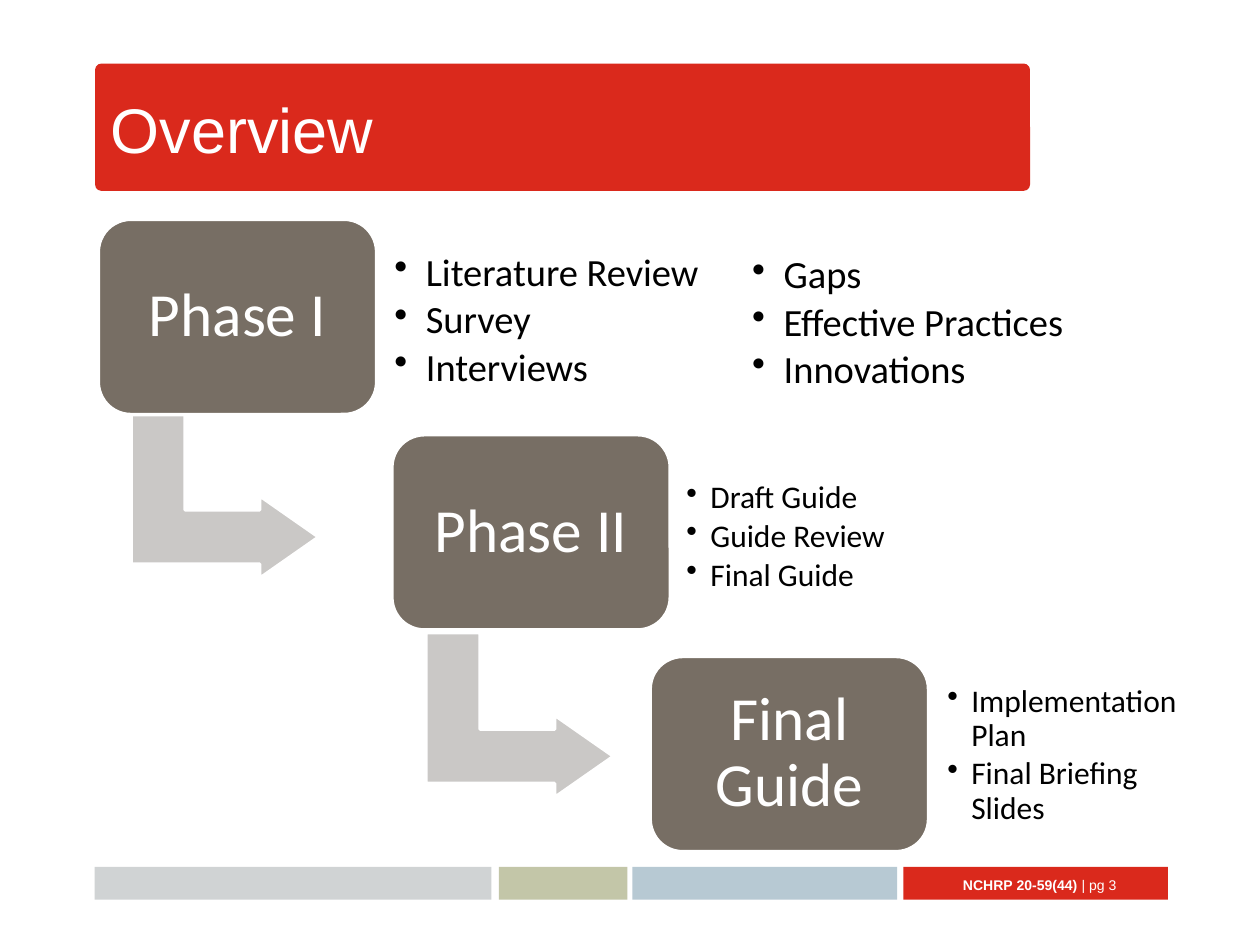
import pptx
import pptx.util
import pptx.dml.color
import pptx.enum.shapes
import pptx.enum.text
import pptx.oxml
import pptx.oxml.ns

Inches = pptx.util.Inches
Pt = pptx.util.Pt
Preset = pptx.enum.shapes.MSO_SHAPE
Align = pptx.enum.text.PP_ALIGN
Anchor = pptx.enum.text.MSO_ANCHOR
RED, BROWN, GRAY, WHITE, BLACK = "DA291C", "776E64", "CAC8C6", "FFFFFF", "000000"


def color(hex_string):
    return pptx.dml.color.RGBColor.from_string(hex_string)


def add_filled(preset, box, fill, adjustments, line=None, line_width=0):
    shape = slide.shapes.add_shape(preset, *map(Inches, box))
    shape.shadow.inherit = False
    shape.fill.solid()
    shape.fill.fore_color.rgb = color(fill)
    for index, value in enumerate(adjustments):
        shape.adjustments[index] = value
    if line:
        shape.line.color.rgb = color(line)
        shape.line.width = Pt(line_width)
    else:
        shape.line.fill.background()
    return shape


presentation = pptx.Presentation()
presentation.slide_width = Inches(10)
presentation.slide_height = Inches(7.5)
slide = presentation.slides.add_slide(presentation.slide_layouts[5])

add_filled(Preset.ROUNDED_RECTANGLE, (0.76, 0.51, 7.41, 1), RED, [0.045], RED, 0.75)

title = slide.shapes.title
title.element.getparent().append(title.element)
title.left, title.top, title.width, title.height = map(Inches, (0.78, 0.51, 7.38, 1.01))
title.text_frame.vertical_anchor = Anchor.MIDDLE
paragraph = title.text_frame.paragraphs[0]
paragraph.alignment = Align.LEFT
run = paragraph.add_run()
run.text = "Overview"
run.font.name = "Arial"
run.font.size = Pt(36)
run.font.color.rgb = color(WHITE)

footer_bars = [
    (0.75, 3.15, "D0D3D4"),
    (3.96, 1.02, "C3C6A8"),
    (5.02, 2.1, "B7C9D3"),
    (7.17, 2.1, RED),
]
for left, width, fill in footer_bars:
    add_filled(Preset.ROUNDED_RECTANGLE, (left, 6.88, width, 0.26), fill, [0])

footer = slide.shapes.add_textbox(*map(Inches, (6.63, 6.82, 2.33, 0.4)))
footer.text_frame.word_wrap = True
footer.text_frame.vertical_anchor = Anchor.MIDDLE
paragraph = footer.text_frame.paragraphs[0]
paragraph.alignment = Align.RIGHT
for text, bold in [("NCHRP 20-59(44) ", True), ("| pg 3", False)]:
    run = paragraph.add_run()
    run.text = text
    run.font.name = "Arial"
    run.font.size = Pt(8)
    run.font.bold = bold
    run.font.color.rgb = color(WHITE)

for left, top in [(1.13, 3.19), (3.47, 4.93)]:
    arrow = add_filled(Preset.BENT_UP_ARROW, (left, top, 1.31, 1.49), GRAY,
                       [0.328, 0.25, 0.358], WHITE, 2)
    arrow.rotation = 90

phases = [("Phase I", 0.78, 1.74), ("Phase II", 3.11, 3.45), ("Final Guide", 5.16, 5.21)]
for text, left, top in phases:
    phase = add_filled(Preset.ROUNDED_RECTANGLE, (left, top, 2.21, 1.55), BROWN,
                       [0.167], WHITE, 2)
    frame = phase.text_frame
    frame.word_wrap = True
    frame.vertical_anchor = Anchor.MIDDLE
    frame.margin_left = frame.margin_right = Inches(0.15)
    frame.margin_top = frame.margin_bottom = Inches(0.15)
    paragraph = frame.paragraphs[0]
    paragraph.alignment = Align.CENTER
    paragraph.line_spacing = 0.9
    run = paragraph.add_run()
    run.text = text
    run.font.name = "Calibri"
    run.font.size = Pt(35)
    run.font.color.rgb = color(WHITE)

bullet_lists = [
    ((3.01, 1.85, 3.72, 1.4), 0.12, 22, 0.25, ["Literature Review", "Survey", "Interviews"]),
    ((5.86, 1.89, 2.81, 1.36), 0.11, 22, 0.25, ["Gaps", "Effective Practices", "Innovations"]),
    ((5.35, 3.64, 1.83, 1.25), 0.1, 18, 0.19, ["Draft Guide", "Guide Review", "Final Guide"]),
    ((7.42, 5.37, 2.11, 1.25), 0.1, 18, 0.19, ["Implementation Plan", "Final Briefing Slides"]),
]
for box, margin, size, indent, items in bullet_lists:
    frame = slide.shapes.add_textbox(*map(Inches, box)).text_frame
    frame.word_wrap = True
    frame.vertical_anchor = Anchor.MIDDLE
    frame.margin_left = frame.margin_right = Inches(margin)
    frame.margin_top = frame.margin_bottom = Inches(margin)
    for index, text in enumerate(items):
        paragraph = frame.add_paragraph() if index else frame.paragraphs[0]
        paragraph.level = 1
        paragraph.line_spacing = 0.9
        paragraph.space_after = Pt(round(size * 0.15, 1))
        properties = paragraph._p.get_or_add_pPr()
        properties.set("marL", str(Inches(indent)))
        properties.set("indent", str(-Inches(indent)))
        bullet = pptx.oxml.parse_xml(
            f'<a:buChar {pptx.oxml.ns.nsdecls("a")} char="•"/>')
        properties.append(bullet)
        run = paragraph.add_run()
        run.text = text
        run.font.name = "Calibri"
        run.font.size = Pt(size)
        run.font.color.rgb = color(BLACK)

presentation.save("out.pptx")
